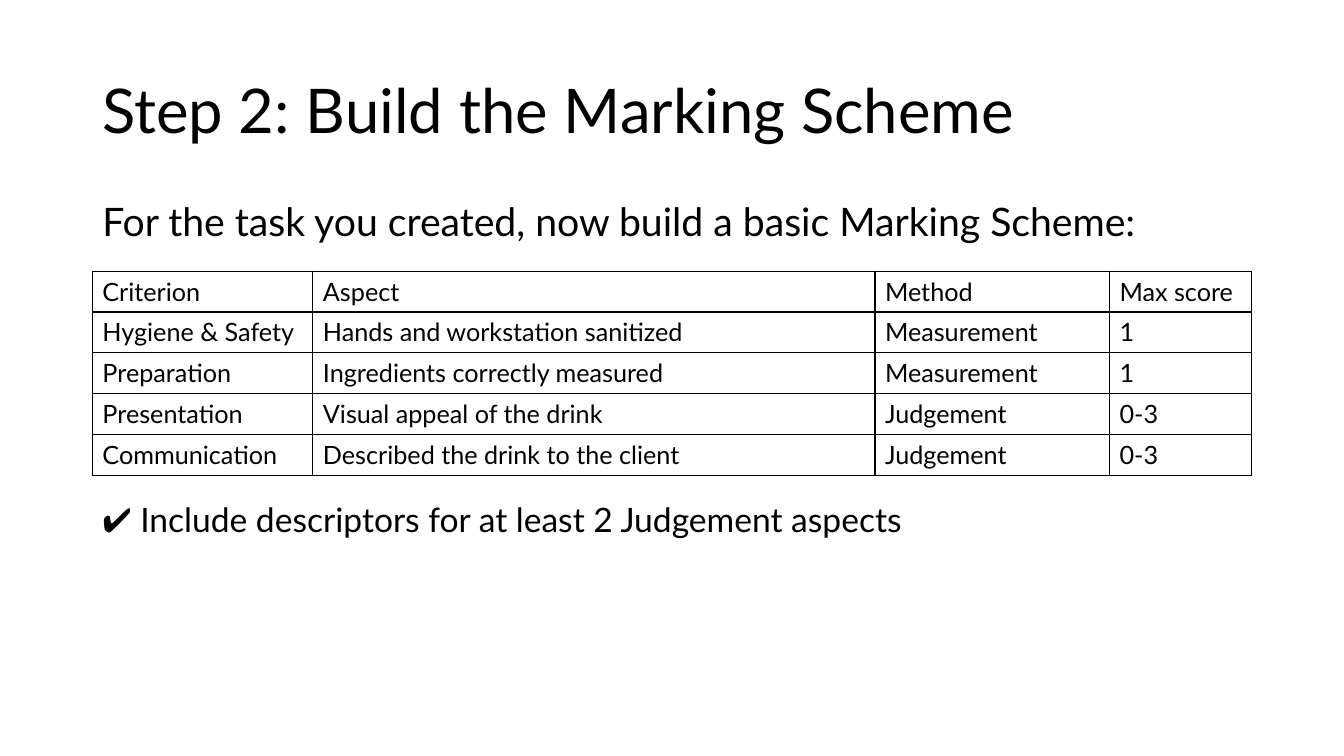
import pptx
import pptx.dml.color
import pptx.enum.text
import pptx.oxml
import pptx.oxml.ns
import pptx.util

Pt = pptx.util.Pt
ANCHOR = pptx.enum.text.MSO_ANCHOR

TITLE = "Step 2: Build the Marking Scheme"
INTRO = "For the task you created, now build a basic Marking Scheme:"
REMINDER = "✔ Include descriptors for at least 2 Judgement aspects"
MARKING_SCHEME = [
    ("Criterion", "Aspect", "Method", "Max score"),
    ("Hygiene & Safety", "Hands and workstation sanitized", "Measurement", "1"),
    ("Preparation", "Ingredients correctly measured", "Measurement", "1"),
    ("Presentation", "Visual appeal of the drink", "Judgement", "0-3"),
    ("Communication", "Described the drink to the client", "Judgement", "0-3"),
]

FONT = "Lato"
INK = "000000"
LEFT, WIDTH = 66, 828
COLUMN_WIDTHS = (157.5, 401.5, 167.5, 101.5)
ROW_HEIGHT = 29.16


def color(hex_code):
    return pptx.dml.color.RGBColor.from_string(hex_code)


def write(frame, words, size):
    frame.text = words
    font = frame.paragraphs[0].runs[0].font
    font.name, font.size = FONT, Pt(size)
    font.color.rgb = color(INK)


def add_line(slide, words, size, top, width, height, anchor=ANCHOR.TOP, spacing=1.0, before=0):
    frame = slide.shapes.add_textbox(Pt(LEFT), Pt(top), Pt(width), Pt(height)).text_frame
    frame.word_wrap = True
    frame.vertical_anchor = anchor
    write(frame, words, size)
    frame.paragraphs[0].line_spacing = spacing
    frame.paragraphs[0].space_before = Pt(before)


def add_borders(cell):
    properties = cell._tc.get_or_add_tcPr()
    for side in ("lnL", "lnR", "lnT", "lnB"):
        properties.append(pptx.oxml.parse_xml(
            f'<a:{side} {pptx.oxml.ns.nsdecls("a")} w="{Pt(1)}"><a:solidFill>'
            f'<a:srgbClr val="{INK}"/></a:solidFill></a:{side}>'))


def add_marking_scheme(slide, top):
    scheme = slide.shapes.add_table(
        len(MARKING_SCHEME), len(COLUMN_WIDTHS), Pt(LEFT), Pt(top),
        Pt(WIDTH), Pt(ROW_HEIGHT * len(MARKING_SCHEME))).table
    scheme.first_row = scheme.horz_banding = False
    for column, width in zip(scheme.columns, COLUMN_WIDTHS):
        column.width = Pt(width)
    for r, entries in enumerate(MARKING_SCHEME):
        scheme.rows[r].height = Pt(ROW_HEIGHT)
        for c, entry in enumerate(entries):
            cell = scheme.cell(r, c)
            write(cell.text_frame, entry, 18)
            add_borders(cell)
            cell.fill.background()


def main():
    deck = pptx.Presentation()
    deck.slide_width, deck.slide_height = Pt(960), Pt(540)
    slide = deck.slides.add_slide(deck.slide_layouts[6])
    add_line(slide, TITLE, 44, 28.75, WIDTH, 104.4, ANCHOR.MIDDLE, 0.9)
    add_line(slide, INTRO, 28, 144, WIDTH, 36.7, spacing=0.8, before=10)
    add_marking_scheme(slide, 193.7)
    add_line(slide, REMINDER, 24, 352.8, 635, 36)
    deck.save("out.pptx")


if __name__ == "__main__":
    main()
